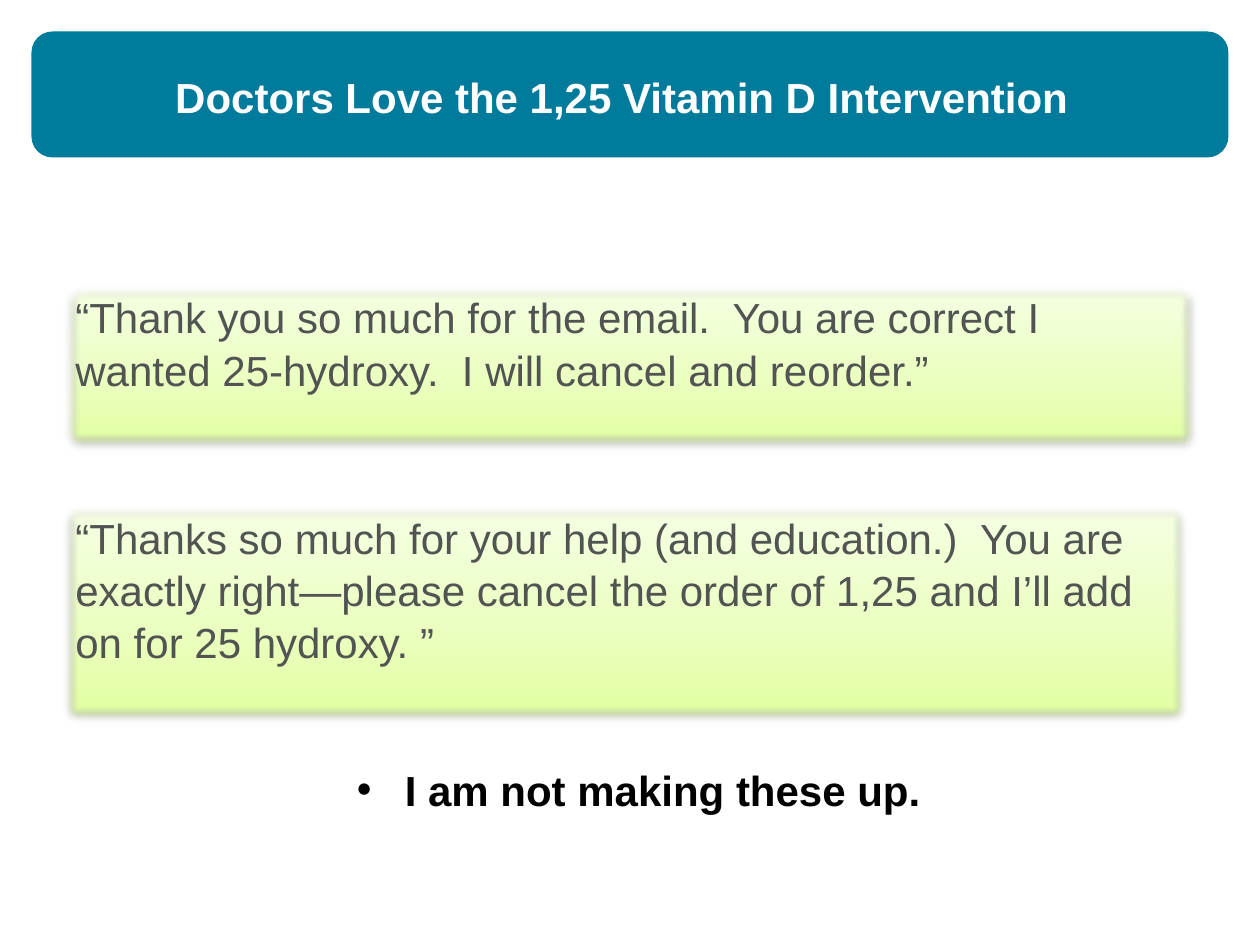
from dataclasses import dataclass

import pptx
import pptx.dml.color
import pptx.enum.shapes
import pptx.enum.text
import pptx.oxml
import pptx.oxml.ns
import pptx.util

SCALE = 9144  # EMU in one px, 100 px to the inch
NS = pptx.oxml.ns.nsdecls("a")
ALIGN = pptx.enum.text.PP_ALIGN
KINDS = pptx.enum.shapes.MSO_SHAPE


@dataclass(frozen=True)
class Theme:
    font: str = "Arial"
    size: int = 24
    lead: float = 1.04
    teal: str = "007B9B"
    white: str = "FFFFFF"
    black: str = "000000"
    gray: str = "525353"
    edge: str = "9BB922"
    fade: tuple = ((0, "E1FF9E"), (35, "E9FFBB"), (100, "F6FFE5"))


@dataclass(frozen=True)
class Box:
    left: int
    top: int
    width: int
    height: int

    def emu(self) -> list:
        return [n * SCALE for n in (self.left, self.top, self.width, self.height)]


@dataclass(frozen=True)
class Quote:
    box: Box
    text: str


THEME = Theme()
BANNER = Box(25, 25, 950, 100)
TITLE = Box(31, 50, 925, 133)
NOTE = Box(58, 600, 898, 58)
QUOTES = (
    Quote(Box(50, 400, 892, 172),
          "“Thanks so much for your help (and education.)  You are exactly right"
          "—please cancel the order of 1,25 and I’ll add on for 25 hydroxy. ”"),
    Quote(Box(50, 225, 900, 131),
          "“Thank you so much for the email.  You are correct I wanted "
          "25-hydroxy.  I will cancel and reorder.”"),
)


def color(code: str) -> pptx.dml.color.RGBColor:
    return pptx.dml.color.RGBColor.from_string(code)


def write(shape, text: str, *, ink: str, bold: bool = False,
          align=ALIGN.CENTER, bullet: bool = False) -> None:
    """Set the one paragraph of a shape, from the top of its box."""
    frame = shape.text_frame
    frame.text = text
    frame.word_wrap = True
    frame.auto_size = pptx.enum.text.MSO_AUTO_SIZE.NONE
    frame.vertical_anchor = pptx.enum.text.MSO_ANCHOR.TOP
    para = frame.paragraphs[0]
    para.alignment = align
    para.line_spacing = THEME.lead
    para.space_before = pptx.util.Pt(0)
    if bullet:
        props = para._p.get_or_add_pPr()
        props.set("marL", str(38 * SCALE))
        props.set("indent", str(-38 * SCALE))
        props.append(pptx.oxml.parse_xml(f'<a:buChar {NS} char="•"/>'))
    font = para.runs[0].font
    font.name = THEME.font
    font.size = pptx.util.Pt(THEME.size)
    font.bold = bold
    font.color.rgb = color(ink)


def place(shape, box: Box) -> None:
    shape.left, shape.top, shape.width, shape.height = box.emu()


def draw_quote(slide, quote: Quote) -> None:
    """Draw a card with a gradient, a soft edge and a shadow."""
    card = slide.shapes.add_shape(KINDS.RECTANGLE, *quote.box.emu())
    props = card.element.spPr
    stops = "".join(
        f'<a:gs pos="{pos * 1000}"><a:srgbClr val="{code}"/></a:gs>'
        for pos, code in THEME.fade)
    props.append(pptx.oxml.parse_xml(
        f'<a:gradFill {NS} rotWithShape="1"><a:gsLst>{stops}</a:gsLst>'
        '<a:lin ang="16200000" scaled="1"/></a:gradFill>'))
    card.line.color.rgb = color(THEME.edge)
    card.line.width = pptx.util.Pt(0.75)
    props.append(pptx.oxml.parse_xml(
        f'<a:effectLst {NS}><a:outerShdw blurRad="40000" dist="20000" '
        'dir="5400000" rotWithShape="0"><a:srgbClr val="000000">'
        '<a:alpha val="38000"/></a:srgbClr></a:outerShdw>'
        '<a:softEdge rad="63500"/></a:effectLst>'))
    write(card, quote.text, ink=THEME.gray, align=ALIGN.LEFT)


def main() -> None:
    deck = pptx.Presentation()
    deck.slide_width, deck.slide_height = 1000 * SCALE, 750 * SCALE
    slide = deck.slides.add_slide(deck.slide_layouts[1])
    title, note = slide.shapes.title, slide.placeholders[1]

    # Banner behind the title
    banner = slide.shapes.add_shape(KINDS.ROUNDED_RECTANGLE, *BANNER.emu())
    banner.shadow.inherit = False
    banner.fill.solid()
    banner.fill.fore_color.rgb = color(THEME.teal)
    banner.line.fill.background()
    title.element.addprevious(banner.element)

    # Title and closing remark
    place(title, TITLE)
    write(title, "Doctors Love the 1,25 Vitamin D Intervention",
          ink=THEME.white, bold=True)
    place(note, NOTE)
    write(note, "I am not making these up.",
          ink=THEME.black, bold=True, bullet=True)

    # Quotes
    for quote in QUOTES:
        draw_quote(slide, quote)

    deck.save("out.pptx")


if __name__ == "__main__":
    main()
